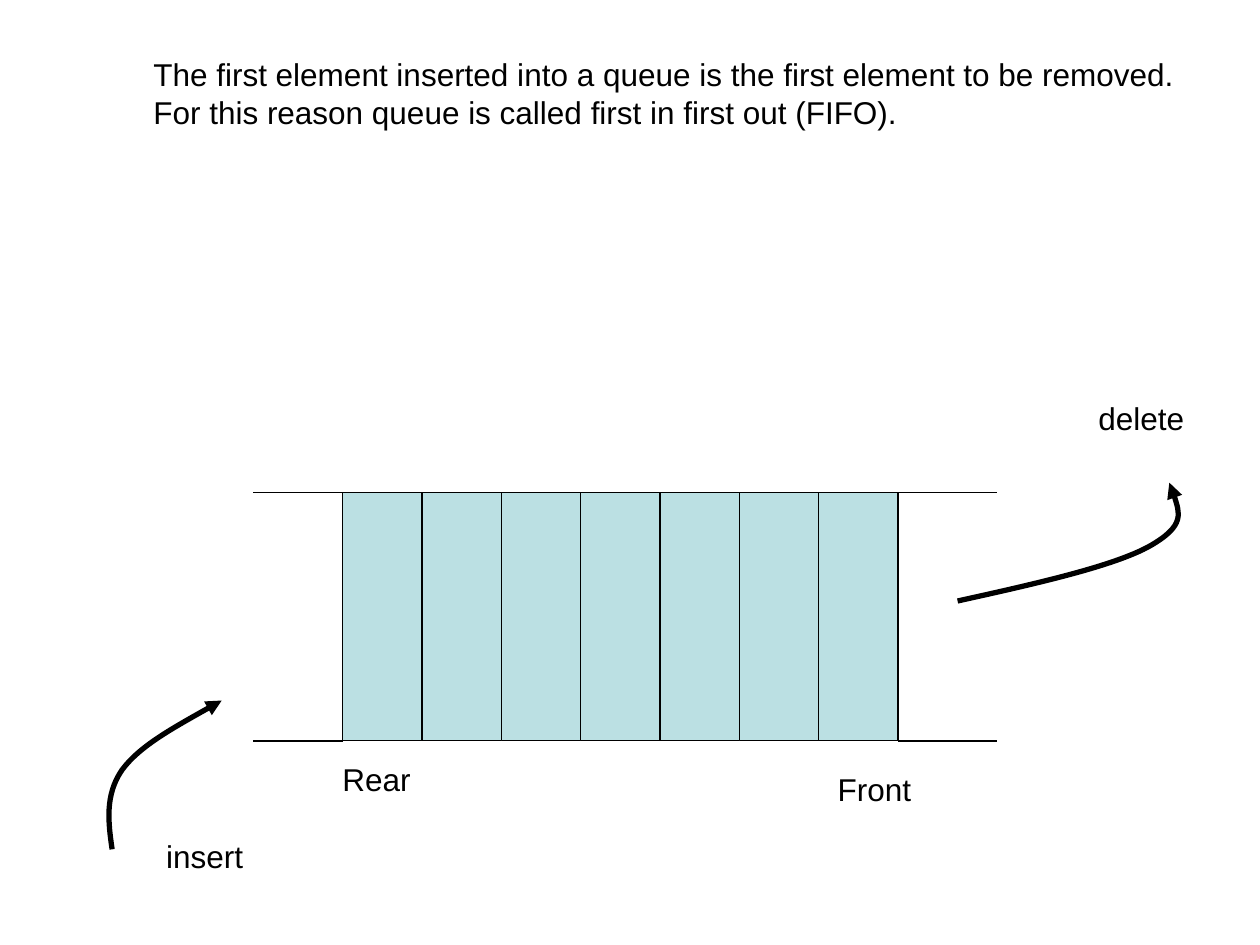
from dataclasses import dataclass

from lxml.etree import SubElement
from pptx import Presentation
from pptx.dml.color import RGBColor as Color
from pptx.enum.shapes import MSO_CONNECTOR as Connector, MSO_SHAPE as Preset
from pptx.enum.text import MSO_ANCHOR as Anchor, MSO_AUTO_SIZE as AutoSize
from pptx.oxml.ns import qn
from pptx.shapes.shapetree import SlideShapes
from pptx.util import Pt


@dataclass(frozen=True)
class Theme:
    ink: Color = Color(0x00, 0x00, 0x00)
    cell: Color = Color(0xBB, 0xE0, 0xE3)
    font: str = "Arial"
    text_size: float = 18
    thin: float = 0.75
    thick: float = 3


@dataclass(frozen=True)
class Label:
    lines: tuple[str, ...]
    left: float
    top: float
    width: float
    height: float = 29


@dataclass(frozen=True)
class CurvedArrow:
    points: tuple[tuple[float, float], ...]
    arrow_end: str


@dataclass(frozen=True)
class Queue:
    left: float = 195.8
    top: float = 281.6
    cell_width: float = 45.35
    height: float = 141.8
    cells: int = 7
    rail_left: float = 144.7
    rail_right: float = 569.5

    @property
    def right(self) -> float:
        return self.left + self.cells * self.cell_width

    @property
    def bottom(self) -> float:
        return self.top + self.height


THEME = Theme()
QUEUE = Queue()

ARROWS = (
    CurvedArrow(
        ((64.1, 485.3), (61.9, 470.2), (59.8, 454.3), (69.8, 439.9),
         (79.9, 426.2), (103.7, 413.3), (126.7, 400.3)),
        "a:tailEnd",
    ),
    CurvedArrow(
        ((668.2, 275.8), (673.2, 288), (677.5, 300.2), (657.4, 311.8),
         (637.2, 323.3), (592.6, 333.4), (547.2, 343.4)),
        "a:headEnd",
    ),
)

LABELS = (
    Label(("insert",), 87.8, 474.5, 58.3),
    Label(("delete",), 620.6, 224.6, 63.4),
    Label(("Front",), 471.6, 436.3, 56.2),
    Label(("Rear",), 188.6, 430.6, 53.3),
    Label(
        (
            "The first element inserted into a queue is the first element to be removed.",
            "For this reason queue is called first in first out (FIFO).",
        ),
        80.6, 28.1, 597.6, 72,
    ),
)


def set_line(shape, width: float) -> None:
    shape.line.color.rgb = THEME.ink
    shape.line.width = Pt(width)


def draw_cell(shapes: SlideShapes, index: int) -> None:
    left = QUEUE.left + index * QUEUE.cell_width
    shape = shapes.add_shape(
        Preset.RECTANGLE, Pt(left), Pt(QUEUE.top), Pt(QUEUE.cell_width), Pt(QUEUE.height)
    )
    shape.shadow.inherit = False
    shape.fill.solid()
    shape.fill.fore_color.rgb = THEME.cell
    set_line(shape, THEME.thin)


def draw_rail(shapes: SlideShapes, start: float, end: float, height: float) -> None:
    rail = shapes.add_connector(
        Connector.STRAIGHT, Pt(start), Pt(height), Pt(end), Pt(height)
    )
    set_line(rail, THEME.thin)
    SubElement(rail._element.spPr, qn("a:effectLst"))


def draw_curved_arrow(shapes: SlideShapes, arrow: CurvedArrow) -> None:
    start, *others = [(Pt(x), Pt(y)) for x, y in arrow.points]
    builder = shapes.build_freeform(*start)
    builder.add_line_segments(others, close=False)
    shape = builder.convert_to_shape()
    shape.shadow.inherit = False
    shape.fill.background()
    set_line(shape, THEME.thick)

    outline = shape._element.spPr.find(".//" + qn("a:path"))
    segments = outline.findall(qn("a:lnTo"))
    for first in range(0, len(segments), 3):
        curve = SubElement(outline, qn("a:cubicBezTo"))
        for segment in segments[first:first + 3]:
            curve.append(segment[0])
            outline.remove(segment)
    SubElement(shape.line._get_or_add_ln(), qn(arrow.arrow_end), type="triangle")


def draw_label(shapes: SlideShapes, label: Label) -> None:
    shape = shapes.add_textbox(
        Pt(label.left), Pt(label.top), Pt(label.width), Pt(label.height)
    )
    frame = shape.text_frame
    frame_format = {
        "word_wrap": False,
        "auto_size": AutoSize.NONE,
        "vertical_anchor": Anchor.TOP,
        "text": "\n".join(label.lines),
    }
    for name, value in frame_format.items():
        setattr(frame, name, value)

    font_format = {"name": THEME.font, "size": Pt(THEME.text_size)}
    for paragraph in frame.paragraphs:
        for run in paragraph.runs:
            for name, value in font_format.items():
                setattr(run.font, name, value)
            run.font.color.rgb = THEME.ink


def main() -> None:
    presentation = Presentation()
    presentation.slide_width = Pt(720)
    presentation.slide_height = Pt(540)
    slide = presentation.slides.add_slide(presentation.slide_layouts[6])
    shapes = slide.shapes

    for index in range(QUEUE.cells):
        draw_cell(shapes, index)
    for height in (QUEUE.top, QUEUE.bottom):
        draw_rail(shapes, QUEUE.left, QUEUE.rail_left, height)
        draw_rail(shapes, QUEUE.right, QUEUE.rail_right, height)
    for arrow in ARROWS:
        draw_curved_arrow(shapes, arrow)
    for label in LABELS:
        draw_label(shapes, label)

    presentation.save("out.pptx")


if __name__ == "__main__":
    main()
